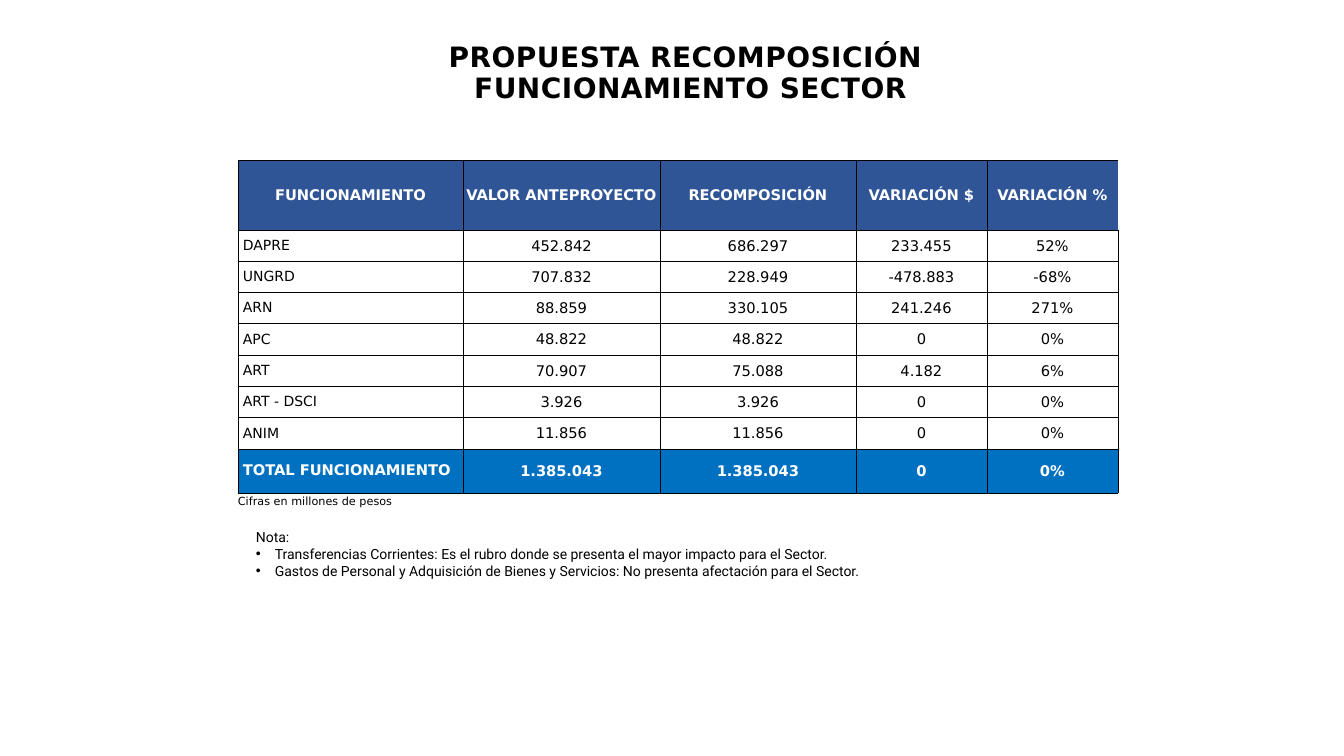
from dataclasses import dataclass

from lxml import etree
from pptx import Presentation
from pptx.dml.color import RGBColor
from pptx.enum.text import MSO_ANCHOR, MSO_AUTO_SIZE, PP_ALIGN
from pptx.oxml.ns import qn
from pptx.util import Emu, Pt

CENTER, LEFT = PP_ALIGN.CENTER, PP_ALIGN.LEFT
MIDDLE = MSO_ANCHOR.MIDDLE
NO_AUTOFIT = MSO_AUTO_SIZE.NONE
PX_PER_INCH = 100.8


@dataclass(frozen=True)
class Theme:
    black: str = "000000"
    white: str = "FFFFFF"
    header_fill: str = "2F5597"
    total_fill: str = "0070C0"
    font: str = "DejaVu Sans"
    note_font: str = "Roboto"
    title_size: float = 20
    value_size: float = 10.5
    label_size: float = 10
    note_size: float = 10
    caption_size: float = 8
    border_width: float = 0.5


@dataclass(frozen=True)
class Box:
    x: int
    y: int
    w: int
    h: int


@dataclass(frozen=True)
class RowStyle:
    color: str
    fill: str | None
    bold: bool
    label_size: float
    label_align: PP_ALIGN


THEME = Theme()
HEADER = RowStyle(THEME.white, THEME.header_fill, True, THEME.value_size, CENTER)
BODY = RowStyle(THEME.black, None, False, THEME.label_size, LEFT)
TOTAL = RowStyle(THEME.white, THEME.total_fill, True, THEME.value_size, LEFT)

TITLE = ("PROPUESTA RECOMPOSICIÓN ", "FUNCIONAMIENTO SECTOR")
ROWS = (
    ("FUNCIONAMIENTO", "VALOR ANTEPROYECTO", "RECOMPOSICIÓN", "VARIACIÓN $", "VARIACIÓN %"),
    ("DAPRE", "452.842", "686.297", "233.455", "52%"),
    ("UNGRD", "707.832", "228.949", "-478.883", "-68%"),
    ("ARN", "88.859", "330.105", "241.246", "271%"),
    ("APC", "48.822", "48.822", "0", "0%"),
    ("ART", "70.907", "75.088", "4.182", "6%"),
    ("ART - DSCI", "3.926", "3.926", "0", "0%"),
    ("ANIM", "11.856", "11.856", "0", "0%"),
    ("TOTAL FUNCIONAMIENTO", "1.385.043", "1.385.043", "0", "0%"),
)
COLUMN_WIDTHS = (225, 197, 196, 131, 131)
HEADER_HEIGHT, BODY_HEIGHT, TOTAL_HEIGHT = 70, 219, 44
CAPTION = "Cifras en millones de pesos"
NOTES = (
    "Transferencias Corrientes: Es el rubro donde se presenta el mayor impacto para el Sector.",
    "Gastos de Personal y Adquisición de Bienes y Servicios: No presenta afectación para el Sector.",
)
NOTE_INDENT = 19


def px(n: float) -> Emu:
    return Emu(round(n * 914400 / PX_PER_INCH))


def place(sp, box: Box) -> None:
    sp.left, sp.top, sp.width, sp.height = map(px, (box.x, box.y, box.w, box.h))


def style_font(p, size: float, color: str = THEME.black, bold: bool = False,
               name: str = THEME.font) -> None:
    p.font.name, p.font.size, p.font.bold = name, Pt(size), bold
    p.font.color.rgb = RGBColor.from_string(color)


def add_title(s, box: Box) -> None:
    sp = s.shapes.title
    place(sp, box)
    tf = sp.text_frame
    tf.word_wrap, tf.auto_size, tf.vertical_anchor = True, NO_AUTOFIT, MIDDLE
    tf.margin_left = tf.margin_right = px(4)
    tf.margin_top = tf.margin_bottom = px(2)
    tf.text = "\n".join(TITLE)
    for p in tf.paragraphs:
        p.alignment, p.line_spacing, p.space_before = CENTER, 0.9, Pt(0)
        style_font(p, THEME.title_size, bold=True)
        p._p.pPr.find(qn("a:defRPr")).set("spc", "30")


def set_borders(cell, sides: str) -> None:
    """Draw thin lines on the given sides (L, R, T, B) and clear the others."""
    tc_pr = cell._tc.get_or_add_tcPr()
    for i, side in enumerate("LRTB"):
        ln = etree.Element(qn(f"a:ln{side}"), w=str(Pt(THEME.border_width)))
        if side in sides:
            fill = etree.SubElement(ln, qn("a:solidFill"))
            etree.SubElement(fill, qn("a:srgbClr"), val=THEME.black)
        else:
            etree.SubElement(ln, qn("a:noFill"))
        tc_pr.insert(i, ln)


def fill_cell(cell, text: str, style: RowStyle, is_label: bool) -> None:
    cell.vertical_anchor = MIDDLE
    roomy = is_label and style.label_align == LEFT
    cell.margin_left = cell.margin_right = cell.margin_top = px(5 if roomy else 1)
    cell.margin_bottom = px(5 if roomy else 0)
    if style.fill:
        cell.fill.solid()
        cell.fill.fore_color.rgb = RGBColor.from_string(style.fill)
    else:
        cell.fill.background()
    cell.text = text
    p = cell.text_frame.paragraphs[0]
    p.alignment = style.label_align if is_label else CENTER
    style_font(p, style.label_size if is_label else THEME.value_size, style.color, style.bold)


def add_budget_table(s, x: int, y: int) -> None:
    height = HEADER_HEIGHT + BODY_HEIGHT + TOTAL_HEIGHT
    frame = s.shapes.add_table(len(ROWS), len(COLUMN_WIDTHS),
                               px(x), px(y), px(sum(COLUMN_WIDTHS)), px(height))
    table = frame.table
    table.first_row = table.horz_banding = False
    for column, width in zip(table.columns, COLUMN_WIDTHS):
        column.width = px(width)
    body_count = len(ROWS) - 2
    heights = (HEADER_HEIGHT, *[BODY_HEIGHT / body_count] * body_count, TOTAL_HEIGHT)
    styles = (HEADER, *[BODY] * body_count, TOTAL)
    last_col = len(COLUMN_WIDTHS) - 1
    for r, (texts, row_height, style) in enumerate(zip(ROWS, heights, styles)):
        table.rows[r].height = px(row_height)
        for c, text in enumerate(texts):
            cell = table.cell(r, c)
            fill_cell(cell, text, style, c == 0)
            set_borders(cell, "LTB" if (r, c) == (0, last_col) else "LRTB")


def add_text(s, box: Box, lines: tuple[str, ...], size: float, font: str):
    sp = s.shapes.add_textbox(0, 0, 0, 0)
    place(sp, box)
    tf = sp.text_frame
    tf.word_wrap = True
    tf.text = "\n".join(lines)
    for i, p in enumerate(tf.paragraphs):
        if i:
            add_bullet(p)
        style_font(p, size, name=font)


def add_bullet(p) -> None:
    p_pr = p._p.get_or_add_pPr()
    p_pr.set("marL", str(px(NOTE_INDENT)))
    p_pr.set("indent", str(-px(NOTE_INDENT)))
    etree.SubElement(p_pr, qn("a:buFont"), typeface="Arial")
    etree.SubElement(p_pr, qn("a:buChar"), char="•")


def main() -> None:
    prs = Presentation()
    prs.slide_width, prs.slide_height = px(1344), px(756)
    s = prs.slides.add_slide(prs.slide_layouts.get_by_name("Title Only"))
    add_title(s, Box(273, 34, 835, 80))
    add_budget_table(s, 238, 160)
    add_text(s, Box(228, 489, 200, 24), (CAPTION,), THEME.caption_size, THEME.font)
    add_text(s, Box(246, 524, 886, 62), ("Nota:", *NOTES), THEME.note_size, THEME.note_font)
    prs.save("out.pptx")


if __name__ == "__main__":
    main()
